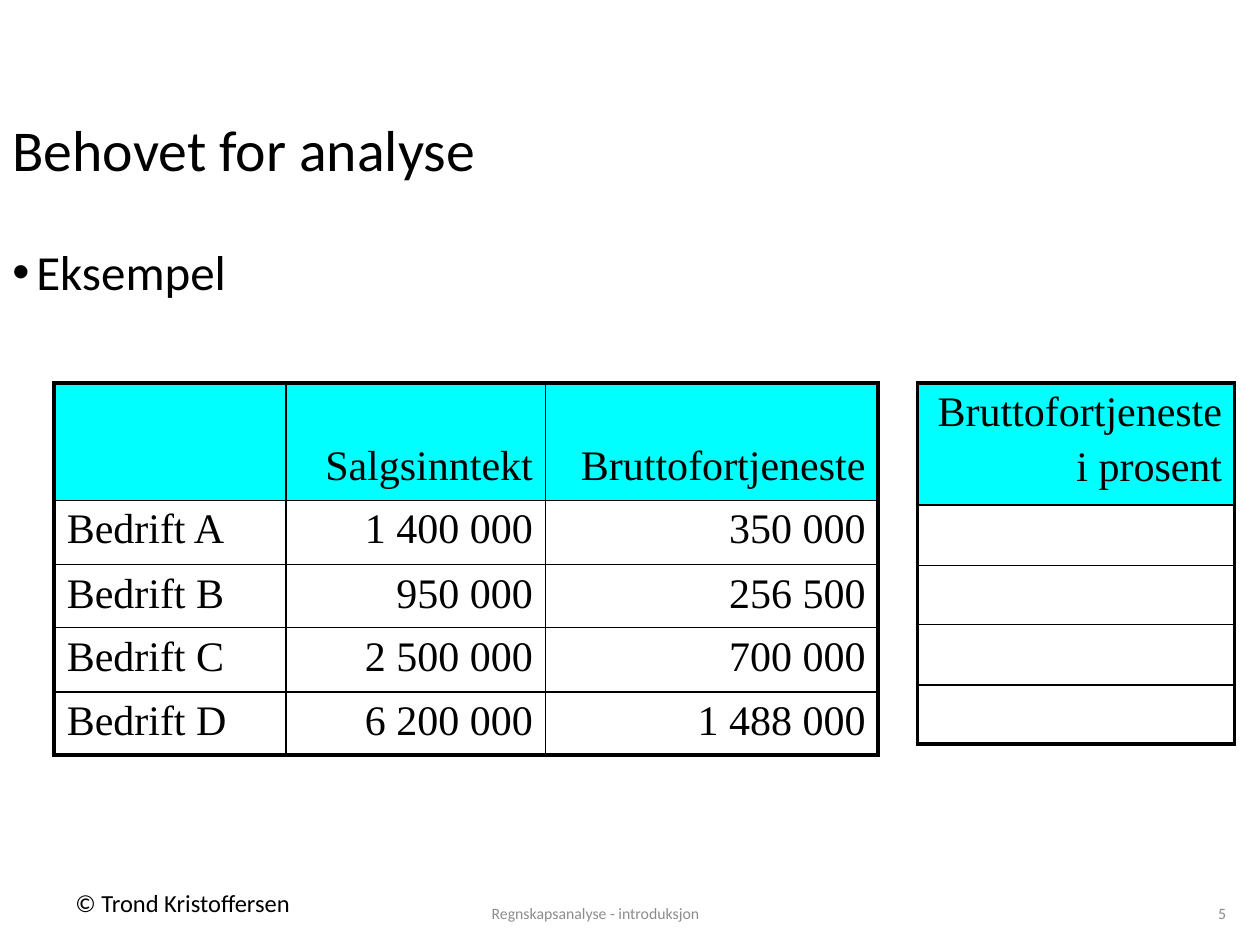
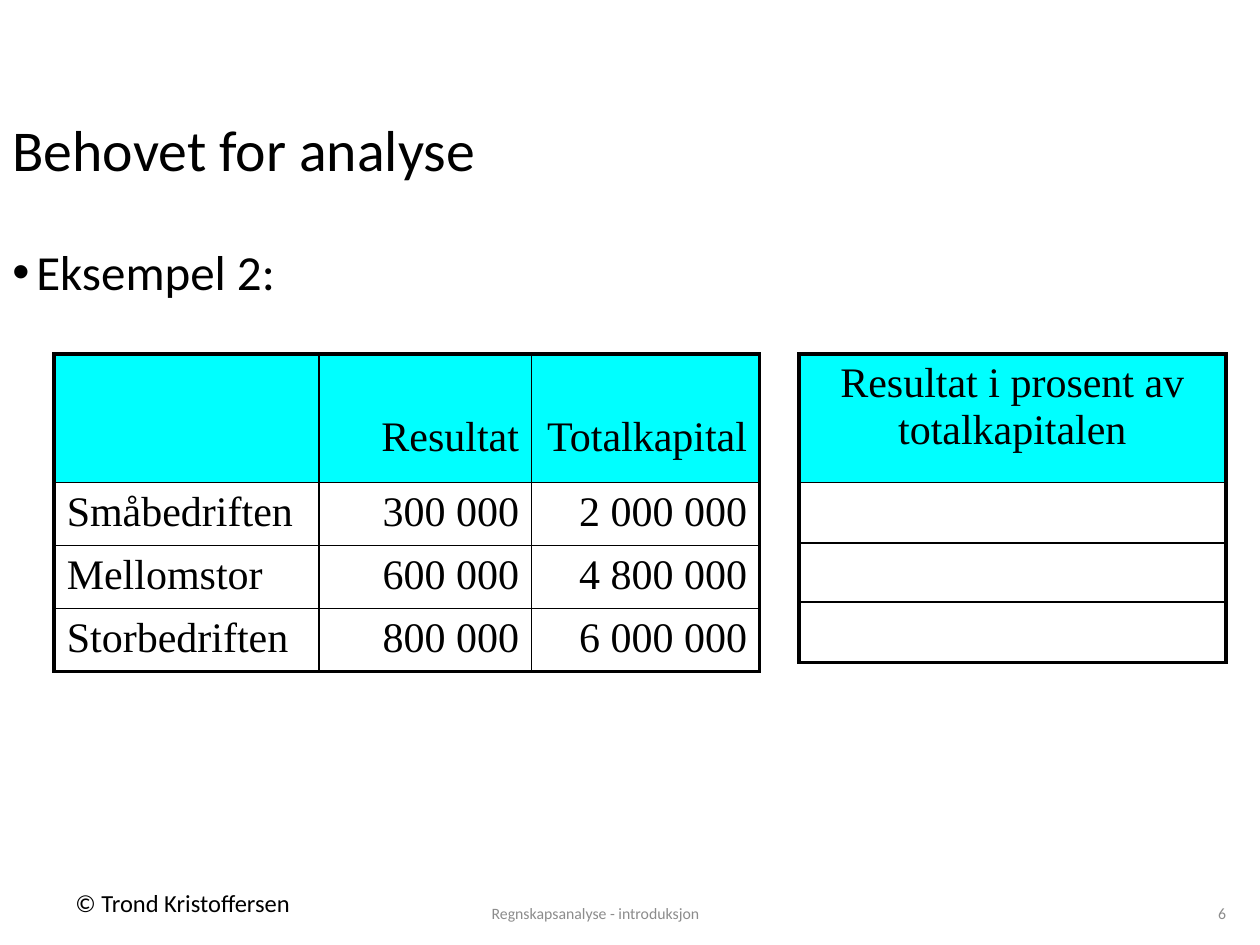
from dataclasses import dataclass
from lxml.etree import SubElement
from pptx import Presentation
from pptx.dml.color import RGBColor as RGB
from pptx.enum.text import MSO_ANCHOR as Anchor, MSO_AUTO_SIZE as Fit, PP_ALIGN as Align
from pptx.oxml.ns import qn
from pptx.util import Pt

PX = 9144
LEFT, MID, RIGHT = Align.LEFT, Align.CENTER, Align.RIGHT


@dataclass(frozen=True)
class Theme:
    sans: str = "Calibri"
    serif: str = "Times New Roman"
    ink: str = "000000"
    gray: str = "8C8C8C"
    head: str = "00FFFF"
    title: int = 33
    body: int = 28
    cell: int = 24
    mark: int = 14
    foot: int = 9
    thin: float = 1
    bold: float = 2.25


class Deck:
    def __init__(self, theme):
        self.theme = theme
        self.show = Presentation()
        self.show.slide_width = 1000 * PX
        self.show.slide_height = 750 * PX
        self.slide = None

    def place(self, shape, box):
        shape.left, shape.top, shape.width, shape.height = [n * PX for n in box]

    def add_run(self, para, text, size, font=None, color=None, align=LEFT):
        para.alignment = align
        run = para.add_run()
        run.text = text
        run.font.size = Pt(size)
        run.font.name = font or self.theme.sans
        run.font.color.rgb = RGB.from_string(color or self.theme.ink)

    def page(self, title):
        self.slide = self.show.slides.add_slide(self.show.slide_layouts[5])
        shape = self.slide.shapes.title
        self.place(shape, (0, 58, 972, 126))
        frame = shape.text_frame
        frame.auto_size = Fit.NONE
        frame.vertical_anchor = Anchor.MIDDLE
        para = frame.paragraphs[0]
        para.line_spacing = 0.9
        self.add_run(para, title, self.theme.title)

    def text(self, box, text, size, color=None, align=LEFT, anchor=Anchor.TOP, wrap=True):
        shape = self.slide.shapes.add_textbox(*[n * PX for n in box])
        frame = shape.text_frame
        frame.word_wrap = wrap
        frame.vertical_anchor = anchor
        para = frame.paragraphs[0]
        self.add_run(para, text, size, color=color, align=align)
        return para

    def bullet(self, text):
        para = self.text((0, 192, 485, 492), text, self.theme.body)
        para.line_spacing = 0.9
        para.space_before = Pt(7.5)
        props = para._p.get_or_add_pPr()
        props.set("marL", str(19 * PX))
        props.set("indent", str(-19 * PX))
        SubElement(props, qn("a:buFont"), typeface="Arial")
        SubElement(props, qn("a:buChar"), char="•")

    def footer(self, number):
        look = self.theme
        self.text((50, 700, 195, 33), "© Trond Kristoffersen", look.mark, wrap=False)
        self.text((314, 700, 317, 50), "Regnskapsanalyse - introduksjon", look.foot,
                  look.gray, MID, Anchor.MIDDLE)
        self.text((775, 700, 208, 50), str(number), look.foot,
                  look.gray, RIGHT, Anchor.MIDDLE)

    def border(self, cell, outer):
        props = cell._tc.get_or_add_tcPr()
        for side, edge in zip("LRTB", outer):
            width = self.theme.bold if edge else self.theme.thin
            line = SubElement(props, qn(f"a:ln{side}"), w=str(Pt(width)))
            fill = SubElement(line, qn("a:solidFill"))
            SubElement(fill, qn("a:srgbClr"), val=self.theme.ink)

    def table(self, left, top, cols, rows, data, aligns, drop=5):
        frame = self.slide.shapes.add_table(
            len(rows), len(cols), left * PX, top * PX, sum(cols) * PX, sum(rows) * PX)
        grid = frame.table
        grid.first_row = grid.horz_banding = False
        for col, width in zip(grid.columns, cols):
            col.width = width * PX
        for row, height in zip(grid.rows, rows):
            row.height = height * PX
        for r in range(len(rows)):
            for c in range(len(cols)):
                cell = grid.cell(r, c)
                self.border(cell, (c == 0, c == len(cols) - 1, r == 0, r == len(rows) - 1))
                if r == 0:
                    cell.fill.solid()
                    cell.fill.fore_color.rgb = RGB.from_string(self.theme.head)
                    cell.margin_top = drop * PX
                else:
                    cell.fill.background()
                if r < len(data) and data[r][c]:
                    self.label(cell.text_frame, data[r][c], aligns[c])

    def label(self, frame, text, align):
        for i, part in enumerate(text.split("\n")):
            para = frame.add_paragraph() if i else frame.paragraphs[0]
            if i:
                para.space_before = Pt(4.8)
            self.add_run(para, part, self.theme.cell, self.theme.serif, align=align)


def main():
    deck = Deck(Theme())
    title = "Behovet for analyse"
    sides = (LEFT, RIGHT, RIGHT)

    deck.page(title)
    deck.bullet("Eksempel")
    sales = [
        ("", "Salgsinntekt", "Bruttofortjeneste"),
        ("Bedrift A", "1 400 000", "350 000"),
        ("Bedrift B", "950 000", "256 500"),
        ("Bedrift C", "2 500 000", "700 000"),
        ("Bedrift D", "6 200 000", "1 488 000"),
    ]
    deck.table(43, 304, (184, 206, 264), (90, 51, 50, 51, 47), sales, sides, 48)
    deck.table(728, 304, (252,), (90, 48, 47, 48, 47),
               [("Bruttofortjeneste\ni prosent",)], (RIGHT,))
    deck.footer(5)

    deck.page(title)
    deck.bullet("Eksempel 2:")
    profit = [
        ("", "Resultat", "Totalkapital"),
        ("Småbedriften", "300 000", "2 000 000"),
        ("Mellomstor", "600 000", "4 800 000"),
        ("Storbedriften", "800 000", "6 000 000"),
    ]
    deck.table(43, 281, (210, 169, 181), (102, 47, 47, 47), profit, sides, 48)
    deck.table(634, 281, (339,), (102, 48, 47, 48),
               [("Resultat i prosent av totalkapitalen",)], (MID,))
    deck.footer(6)

    deck.show.save("out.pptx")


if __name__ == "__main__":
    main()
